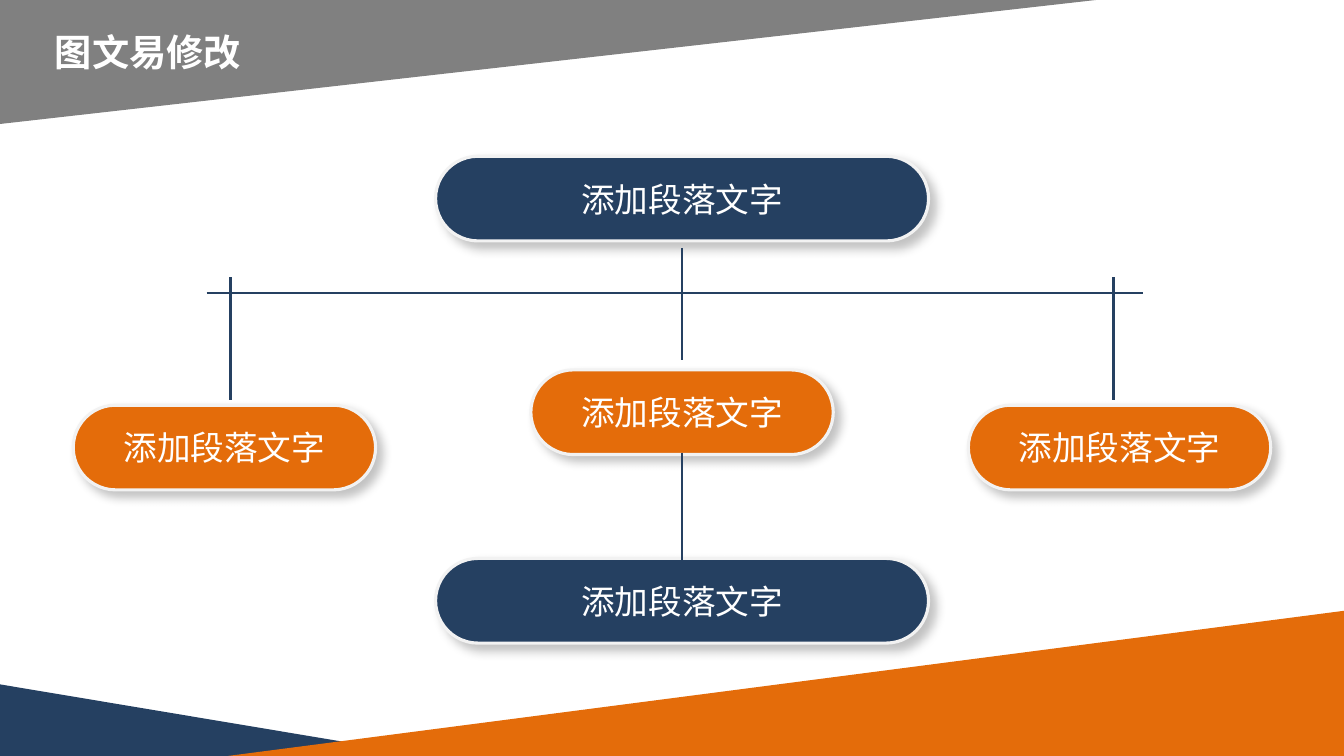
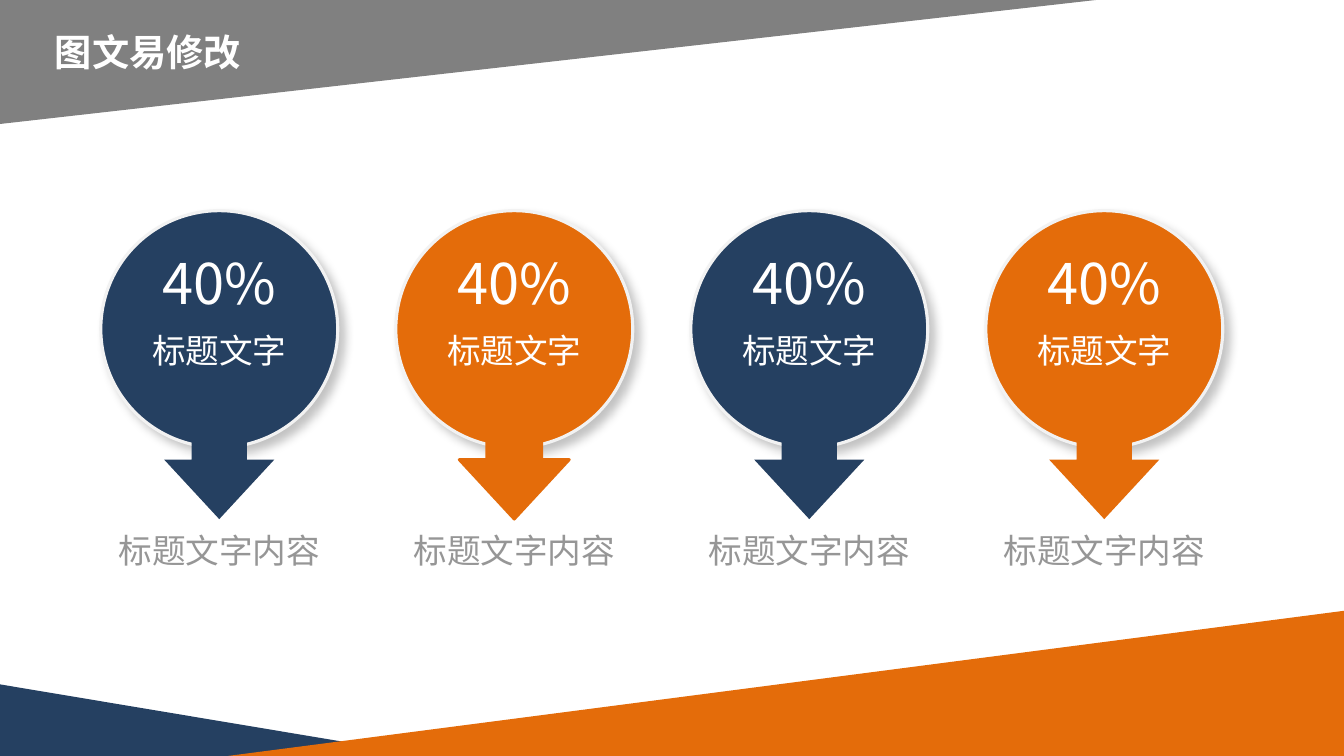
from lxml import etree
from pptx import Presentation
from pptx.dml.color import RGBColor
from pptx.enum.shapes import MSO_CONNECTOR, MSO_SHAPE
from pptx.enum.text import MSO_ANCHOR, MSO_AUTO_SIZE, PP_ALIGN
from pptx.oxml.ns import qn
from pptx.util import Inches, Pt

TRIANGLE = MSO_SHAPE.RIGHT_TRIANGLE
PILL = MSO_SHAPE.ROUNDED_RECTANGLE
DISC = MSO_SHAPE.OVAL
DOWN_ARROW = MSO_SHAPE.DOWN_ARROW
STRAIGHT = MSO_CONNECTOR.STRAIGHT
MIDDLE = MSO_ANCHOR.MIDDLE
CENTER = PP_ALIGN.CENTER
NO_AUTOFIT = MSO_AUTO_SIZE.NONE

SLIDE_W, SLIDE_H = Inches(13.33), Inches(7.5)
TITLE_ONLY = 5
CJK_FONT, LATIN_FONT = "Noto Sans CJK SC", "Arial"
COLORS = {
    "navy": "254061",
    "orange": "E46C0A",
    "gray": "808080",
    "rim": "F2F2F2",
    "caption": "969696",
    "white": "FFFFFF",
    "black": "000000",
}


def color(name):
    return RGBColor.from_string(COLORS[name])


def across(percent):
    return round(SLIDE_W * percent / 100)


def down(percent):
    return round(SLIDE_H * percent / 100)


def place(left, top, width, height):
    """Turn percentages of the slide into a position and size."""
    return across(left), down(top), across(width), down(height)


def write(frame, text, size, ink="white", font=CJK_FONT, bold=False, wrap=True):
    frame.text = text
    frame.word_wrap = wrap
    frame.auto_size = NO_AUTOFIT
    frame.vertical_anchor = MIDDLE
    paragraph = frame.paragraphs[0]
    paragraph.alignment = CENTER
    run = paragraph.runs[0]
    run.font.name = font
    run.font.size = Pt(size)
    run.font.bold = bold
    run.font.color.rgb = color(ink)
    east_asian = etree.SubElement(run.font._element, qn("a:ea"))
    east_asian.set("typeface", CJK_FONT)


def add_label(shapes, box, text, size, ink="white"):
    write(shapes.add_textbox(*place(*box)).text_frame, text, size, ink)


def add_solid(shapes, preset, box, fill, outline=None, outline_width=0):
    solid = shapes.add_shape(preset, *place(*box))
    solid.shadow.inherit = False
    solid.fill.solid()
    solid.fill.fore_color.rgb = color(fill)
    if outline:
        solid.line.color.rgb = color(outline)
        solid.line.width = Pt(outline_width)
    else:
        solid.line.fill.background()
    return solid


def add_raised(shapes, preset, box, fill):
    """Add a shape with a pale rim and a soft shadow to the lower right."""
    raised = add_solid(shapes, preset, box, fill, "rim", 2.25)
    effects = raised.element.spPr.find(qn("a:effectLst"))
    shadow = etree.SubElement(effects, qn("a:outerShdw"), blurRad=str(Pt(7)),
                              dist=str(Pt(5.9)), dir="2700000",
                              algn="tl", rotWithShape="0")
    tint = etree.SubElement(shadow, qn("a:srgbClr"), val=COLORS["black"])
    etree.SubElement(tint, qn("a:alpha"), val="23000")
    return raised


def add_pill(slide, center, top, width, fill):
    pill = add_raised(slide.shapes, PILL,
                      (center - width / 2, top, width, 11.2), fill)
    pill.adjustments[0] = 0.5
    write(pill.text_frame, "添加段落文字", 24, font=LATIN_FONT, wrap=False)


def add_branch(slide, x1, y1, x2, y2):
    branch = slide.shapes.add_connector(
        STRAIGHT, across(x1), down(y1), across(x2), down(y2))
    branch.line.color.rgb = color("navy")
    branch.line.width = Pt(1.5)
    etree.SubElement(branch.element.spPr, qn("a:effectLst"))


def add_marker(slide, left, fill, arrow_outline):
    """Add a disc with a figure, and an arrow pointing to its caption."""
    shapes = slide.shapes.add_group_shape().shapes
    width = 17.63
    add_raised(shapes, DISC, (left, 27.87, width, 31.33), fill)
    arrow_width = 8.2
    arrow = add_solid(
        shapes, DOWN_ARROW,
        (left + (width - arrow_width) / 2, 49.87, arrow_width, 18.8),
        fill, fill if arrow_outline else None, arrow_outline)
    arrow.adjustments[0] = 0.5
    arrow.adjustments[1] = 0.54
    add_label(shapes, (left, 32.13, width, 10.27), "40%", 40)
    add_label(shapes, (left, 43, width, 6.67), "标题文字", 24)
    add_label(shapes, (left, 69.47, width, 6.67), "标题文字内容", 24, "caption")


def move_bands_to_layout(slide):
    """Draw the corner bands on a slide, then hand them to its layout."""
    bands = [
        ("navy", (0, 90.53, 31.87, 9.47), False, 0),
        ("orange", (16.95, 80.8, 83.05, 19.2), True, 0),
        ("gray", (0, 0, 81.53, 16.4), True, 180),
    ]
    layout_tree = slide.slide_layout.shapes.element
    for depth, (fill, box, mirrored, turn) in enumerate(bands):
        band = add_solid(slide.shapes, TRIANGLE, box, fill)
        band.rotation = turn
        if mirrored:
            band.element.spPr.find(qn("a:xfrm")).set("flipH", "1")
        layout_tree.insert(2 + depth, band.element)


def add_titled_slide(deck):
    slide = deck.slides.add_slide(deck.slide_layouts[TITLE_ONLY])
    title = slide.shapes.title
    title.left, title.top, title.width, title.height = place(0, 3.87, 22.05, 6)
    frame = title.text_frame
    write(frame, "图文易修改", 26.6, bold=True)
    frame.margin_left = frame.margin_right = 0
    frame.margin_top = frame.margin_bottom = 0
    return slide


def build_hierarchy(slide):
    trunk, wide, narrow = 50.75, 36.68, 22.5
    pills = [
        (trunk, 20.67, wide, "navy"),
        (trunk, 48.93, narrow, "orange"),
        (50 - 33.3, 53.6, narrow, "orange"),
        (50 + 33.3, 53.6, narrow, "orange"),
        (trunk, 73.87, wide, "navy"),
    ]
    for pill in pills:
        add_pill(slide, *pill)

    add_branch(slide, 15.38, 38.8, 85.05, 38.8)
    drops = [
        (50 - 32.85, 36.67, 52.93),
        (50 + 32.85, 36.67, 52.93),
        (trunk, 32.8, 47.6),
        (trunk, 59.87, 74.67),
    ]
    for x, start, end in drops:
        add_branch(slide, x, start, x, end)


def build_markers(slide):
    first, pitch = 7.5, 21.95
    looks = [("navy", 0), ("orange", 2), ("navy", 0), ("orange", 0)]
    for column, (fill, arrow_outline) in enumerate(looks):
        add_marker(slide, first + column * pitch, fill, arrow_outline)


def main():
    deck = Presentation()
    deck.slide_width, deck.slide_height = SLIDE_W, SLIDE_H
    hierarchy = add_titled_slide(deck)
    move_bands_to_layout(hierarchy)
    build_hierarchy(hierarchy)
    build_markers(add_titled_slide(deck))
    deck.save("out.pptx")


if __name__ == "__main__":
    main()
